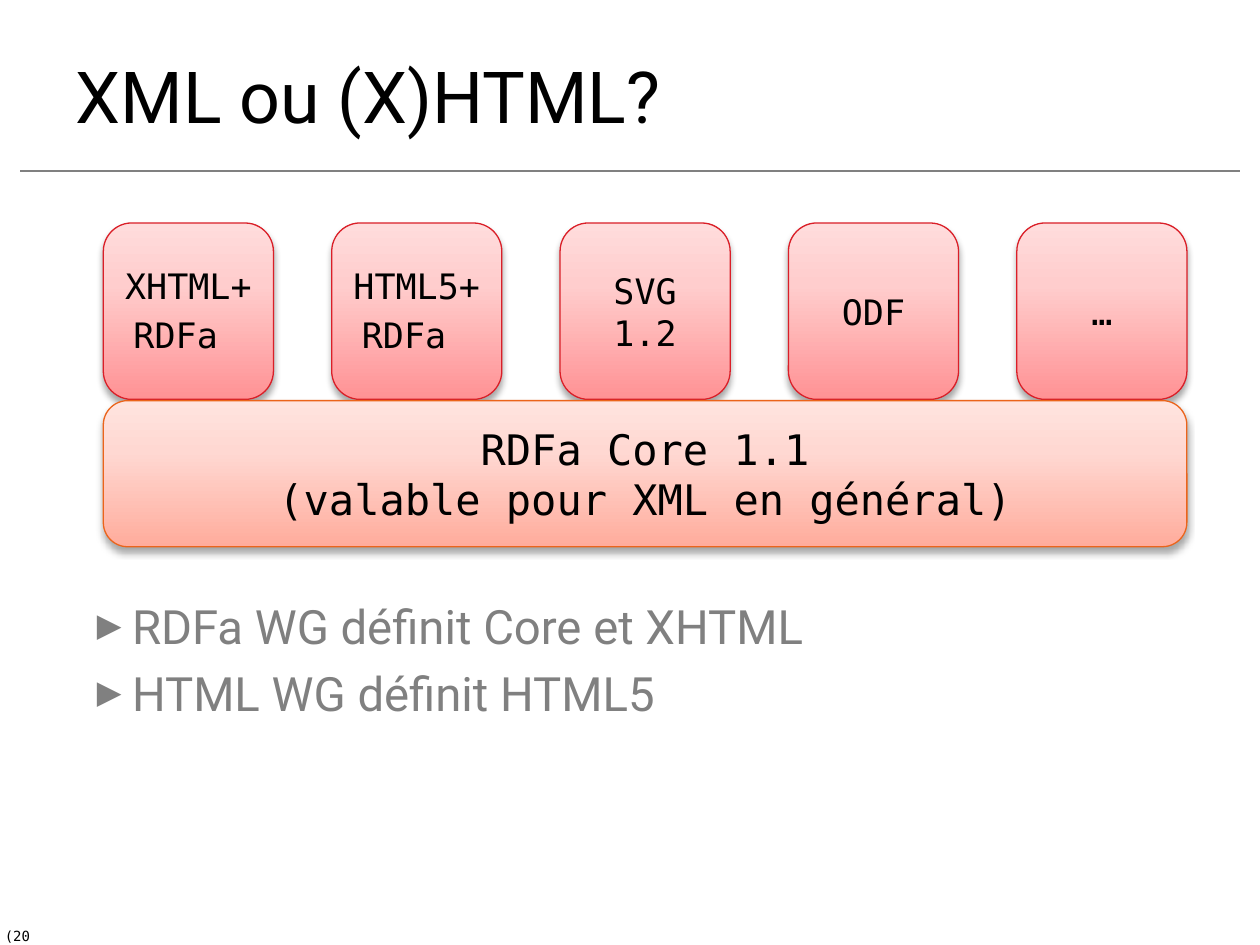
from copy import deepcopy

from lxml import etree
from pptx import Presentation
from pptx.dml.color import RGBColor
from pptx.enum.shapes import MSO_CONNECTOR, MSO_SHAPE
from pptx.enum.text import MSO_ANCHOR, PP_ALIGN
from pptx.oxml.ns import qn
from pptx.util import Inches, Pt

LINE = MSO_CONNECTOR.STRAIGHT
ROUND = MSO_SHAPE.ROUNDED_RECTANGLE
MIDDLE = MSO_ANCHOR.MIDDLE
LEFT, CENTER = PP_ALIGN.LEFT, PP_ALIGN.CENTER

BLACK = RGBColor(0x00, 0x00, 0x00)
GRAY = RGBColor(0x80, 0x80, 0x80)
RED = RGBColor(0xDA, 0x1F, 0x28)
ORANGE = RGBColor(0xEB, 0x64, 0x1B)
PINKS = [RGBColor(0xFF, 0x92, 0x94), RGBColor(0xFF, 0xCD, 0xCD), RGBColor(0xFF, 0xDC, 0xDC)]
PEACHES = [RGBColor(0xFF, 0xAC, 0x9C), RGBColor(0xFF, 0xD8, 0xD2), RGBColor(0xFF, 0xE4, 0xDF)]
STOPS = [0, 0.65, 1]

SANS, MONO = "Roboto", "DejaVu Sans Mono"
STYLES = {
    "title": {"name": SANS, "size": Pt(41)},
    "list": {"name": SANS, "size": Pt(27)},
    "small": {"name": MONO, "size": Pt(20)},
    "large": {"name": MONO, "size": Pt(24)},
    "page": {"name": MONO, "size": Pt(8)},
}


def add(parent, tag, **attrs):
    node = etree.SubElement(parent, qn(tag))
    for key, value in attrs.items():
        node.set(key, str(value))
    return node


class Deck:
    def __init__(self):
        self.show = Presentation()
        self.show.slide_width, self.show.slide_height = Inches(10), Inches(7.5)
        self.slide = self.show.slides.add_slide(self.show.slide_layouts[5])

    def style(self, font, kind, color=BLACK):
        for key, value in STYLES[kind].items():
            setattr(font, key, value)
        font.color.rgb = color

    def title(self, text, *box):
        shape = self.slide.shapes.title
        shape.left, shape.top, shape.width, shape.height = map(Inches, box)
        frame = shape.text_frame
        frame.text = text
        frame.vertical_anchor = MIDDLE
        para = frame.paragraphs[0]
        para.alignment = LEFT
        self.style(para.runs[0].font, "title")

    def rule(self, left, right, top):
        line = self.slide.shapes.add_connector(LINE, *map(Inches, (left, top, right, top)))
        line.line.color.rgb = GRAY
        line.line.width = Pt(1)
        add(line._element.spPr, "a:effectLst")

    def label(self, text, *box):
        frame = self.slide.shapes.add_textbox(*map(Inches, box)).text_frame
        frame.word_wrap = False
        frame.text = text
        self.style(frame.paragraphs[0].runs[0].font, "page")

    def bullets(self, items, *box):
        frame = self.slide.shapes.add_textbox(*map(Inches, box)).text_frame
        frame.word_wrap = True
        frame.text = "\n".join(items)
        for i, para in enumerate(frame.paragraphs):
            if i:
                para.space_before = Pt(6)
            props = para._p.get_or_add_pPr()
            props.set("marL", str(Inches(0.4)))
            props.set("indent", str(Inches(-0.28)))
            add(add(props, "a:buClr"), "a:srgbClr", val=GRAY)
            add(props, "a:buSzPct", val=68000)
            add(props, "a:buFont", typeface="DejaVu Sans")
            add(props, "a:buChar", char="▶")
            self.style(para.runs[0].font, "list", GRAY)

    def block(self, text, kind, edge, colors, *box):
        shape = self.slide.shapes.add_shape(ROUND, *map(Inches, box))
        shape.line.color.rgb = edge
        shape.line.width = Pt(0.75)
        self.shade(shape, colors)
        self.shadow(shape)
        frame = shape.text_frame
        frame.word_wrap = True
        frame.vertical_anchor = MIDDLE
        frame.text = text
        for para in frame.paragraphs:
            para.alignment = CENTER
            self.style(para.runs[0].font, kind)
        return frame

    def shade(self, shape, colors):
        fill = shape.fill
        fill.gradient()
        fill.gradient_angle = 90
        stops = shape._element.spPr.find(".//" + qn("a:gsLst"))
        stops.append(deepcopy(stops[-1]))
        for stop, place, color in zip(fill.gradient_stops, STOPS, colors):
            stop.position = place
            stop.color.rgb = color

    def shadow(self, shape):
        shape.shadow.inherit = False
        effects = shape._element.spPr.find(qn("a:effectLst"))
        outer = add(effects, "a:outerShdw", blurRad=Pt(4), dist=Pt(3),
                    dir=90 * 60000, rotWithShape=0)
        color = add(outer, "a:srgbClr", val=BLACK)
        add(color, "a:alpha", val=35000)

    def tail(self, frame):
        run = frame.paragraphs[0].add_run()
        run.text = " "
        self.style(run.font, "large")


def main():
    deck = Deck()
    deck.label("(20)", -0.06, 7.31, 0.4, 0.23)
    deck.rule(0.16, 9.84, 1.36)
    deck.title("XML ou (X)HTML?", 0.5, 0.25, 9, 1)
    deck.bullets(["RDFa WG définit Core et XHTML", "HTML WG définit HTML5"],
                 0.55, 4.69, 9, 2.03)

    left, wide, span = 0.82, 1.35, 8.6
    names = ["XHTML+RDFa", "HTML5+RDFa", "SVG\n1.2", "ODF", "…"]
    step = (span - wide) / (len(names) - 1)
    for i, name in enumerate(names):
        frame = deck.block(name, "small", RED, PINKS, left + i * step, 1.77, wide, 1.4)
        if "+" in name:
            deck.tail(frame)
    deck.block("RDFa Core 1.1\n(valable pour XML en général)", "large", ORANGE, PEACHES,
               left, 3.18, span, 1.16)
    deck.show.save("out.pptx")


if __name__ == "__main__":
    main()
